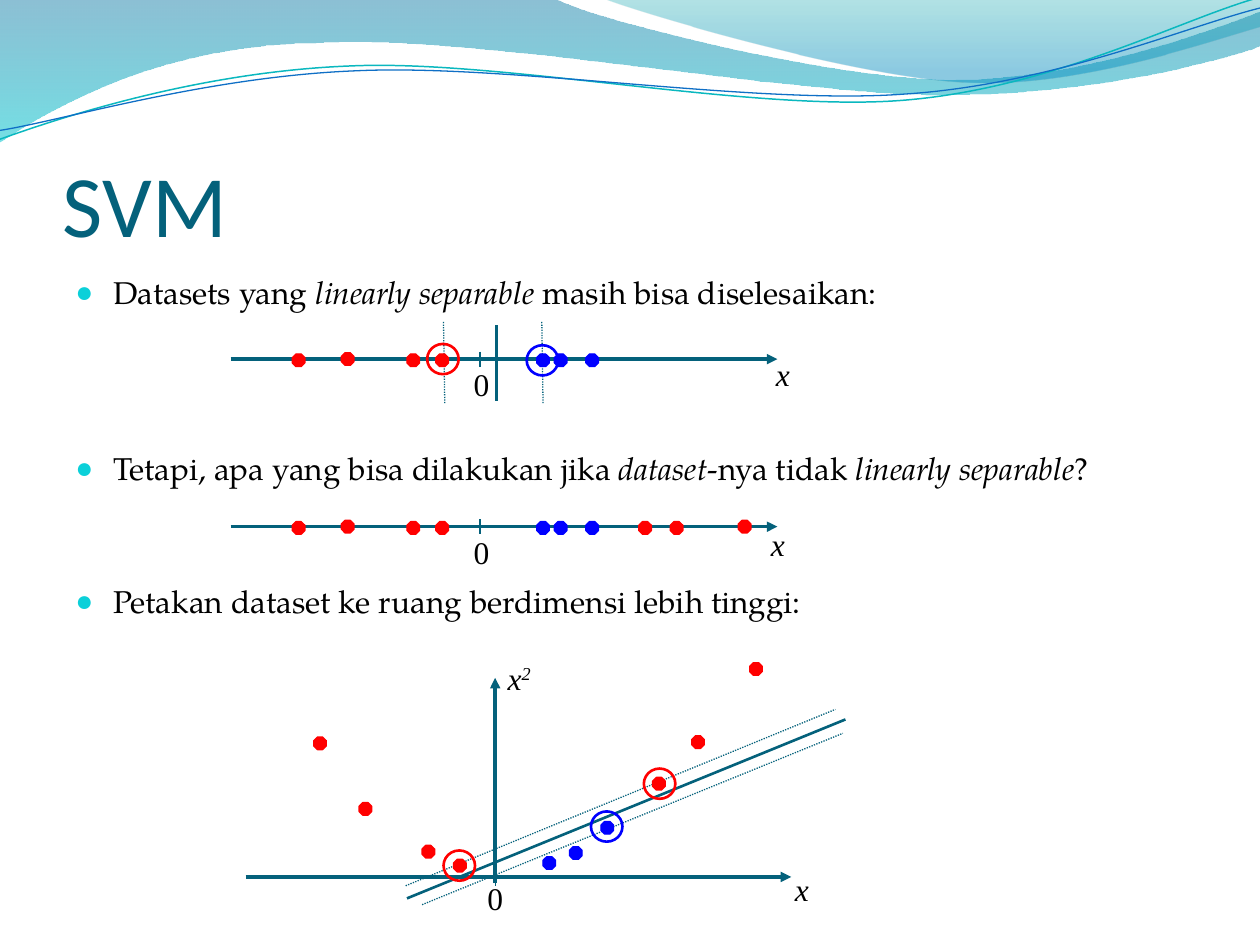
from lxml.etree import SubElement
from pptx import Presentation
from pptx.dml.color import RGBColor
from pptx.enum.dml import MSO_LINE_DASH_STYLE as Dash
from pptx.enum.shapes import MSO_CONNECTOR as Connector, MSO_SHAPE as Shape
from pptx.enum.text import MSO_ANCHOR as Anchor
from pptx.oxml.ns import qn
from pptx.util import Inches, Pt

TEAL, RED, BLUE = "04617B", "FF0000", "0000FF"
color = RGBColor.from_string


def add_wave(start, segments, close):
    """Draw straight (2 numbers) and cubic (6 numbers) segments as one outline."""
    points = [(Inches(x), Inches(y)) for segment in segments
              for x, y in zip(segment[::2], segment[1::2])]
    builder = shapes.build_freeform(Inches(start[0]), Inches(start[1]))
    builder.add_line_segments(points, close=close)
    wave = builder.convert_to_shape()
    wave.shadow.inherit = False
    # Merge each three points of a cubic segment into one curve
    corners = iter(list(wave._element.iter(qn("a:lnTo"))))
    for segment in segments:
        corner = next(corners)
        if len(segment) == 6:
            corner.tag = qn("a:cubicBezTo")
            for _ in range(2):
                extra = next(corners)
                corner.append(extra[0])
                extra.getparent().remove(extra)
    return wave


deck = Presentation()
deck.slide_width, deck.slide_height = Inches(10), Inches(7.5)
page = deck.slides.add_slide(deck.slide_layouts[6])
shapes = page.shapes

# Filled waves: start, segments, gradient stops (position, colour, opacity %)
filled_waves = [
    ((0, -0.01),
     [(4.4, -0.01), (4.76, 0.17, 6.64, 0.63, 7.58, 0.63), (8.53, 0.63, 9.58, 0.26, 10, 0.09),
      (10.01, 0.36), (9.83, 0.44, 8.7, 0.76, 7.46, 0.75), (6.22, 0.75, 3.82, 0.28, 2.57, 0.34),
      (1.29, 0.35, 0.46, 0.83, -0.01, 1.13), (0, -0.01)],
     [(0, "0074A1", 45), (1, "00C6CF", 55)]),
    ((4.79, -0.01),
     [(5.09, 0.11, 6.82, 0.62, 7.69, 0.65), (8.56, 0.69, 9.61, 0.32, 10, 0.21), (10, 0),
      (4.79, -0.01)],
     [(0, "00A1A9", 30), (0.8, "008BBF", 45)]),
]
for start, segments, stops in filled_waves:
    wave = add_wave(start, segments, True)
    wave.line.fill.background()
    wave.fill.gradient()
    wave.fill.gradient_angle = 270
    for stop, (position, shade, opacity) in zip(wave.fill.gradient_stops, stops):
        stop.position = position
        stop.color.rgb = color(shade)
    for node, (position, shade, opacity) in zip(wave._element.iter(qn("a:srgbClr")), stops):
        SubElement(node, qn("a:alpha"), val=str(opacity * 1000))

# Wave outlines, tilted slightly
wave_lines = [
    ((-0.02, 0.87), [(0.47, 0.72, 1.58, 0.41, 2.78, 0.42), (3.96, 0.42, 5.91, 0.93, 7.12, 0.9),
                     (8.32, 0.87, 9.39, 0.36, 10, 0.22)], "0AB8BF", 0.85),
    ((-0.02, 0.8), [(0.46, 0.75, 1.64, 0.45, 2.83, 0.46), (4.03, 0.46, 5.96, 0.88, 7.16, 0.85),
                    (8.35, 0.83, 9.42, 0.42, 10.02, 0.3)], "0F6FC6", 0.75),
]
for start, segments, shade, width in wave_lines:
    wave = add_wave(start, segments, False)
    wave.rotation = 357.3
    wave.fill.background()
    wave.line.color.rgb = color(shade)
    wave.line.width = Pt(width)

# Title
box = shapes.add_textbox(Inches(0.5), Inches(0.77), Inches(9), Inches(1.25))
frame = box.text_frame
frame.word_wrap = True
frame.vertical_anchor = Anchor.BOTTOM
frame.margin_left = frame.margin_right = frame.margin_bottom = 0
para = frame.paragraphs[0]
para.text = "SVM"
para.font.name, para.font.size = "Calibri", Pt(50)
para.font.color.rgb = color(TEAL)

# Bullets: space before, then runs that alternate upright and italic
bullets = [
    (0, ["Datasets yang ", "linearly separable", " masih bisa diselesaikan:"]),
    (79, ["Tetapi, apa yang bisa dilakukan jika ", "dataset", "-nya tidak ",
          "linearly separable", "?"]),
    (54.4, ["Petakan dataset ke ruang berdimensi lebih tinggi:"]),
]
box = shapes.add_textbox(Inches(0.5), Inches(2.12), Inches(9), Inches(4.8))
frame = box.text_frame
frame.word_wrap = True
for index, (gap, texts) in enumerate(bullets):
    para = frame.add_paragraph() if index else frame.paragraphs[0]
    props = para._p.get_or_add_pPr()
    props.set("marL", str(Inches(0.3)))
    props.set("indent", str(-Inches(0.3)))
    SubElement(SubElement(props, qn("a:buClr")), qn("a:srgbClr"), val="0BD0D9")
    SubElement(props, qn("a:buSzPct"), val="95000")
    SubElement(props, qn("a:buFont"), typeface="Times New Roman")
    SubElement(props, qn("a:buChar"), char="●")
    if gap:
        para.space_before = Pt(gap)
    para.font.name, para.font.size = "TeX Gyre Pagella", Pt(18)
    para.font.color.rgb = color("000000")
    for order, text in enumerate(texts):
        span = para.add_run()
        span.text = text
        if order % 2:
            span.font.italic = True

# Contents of the three plots
number_lines = (2.85, 4.18)
lines = []   # x1, y1, x2, y2, width, style
dots = []    # left, top, colour
labels = []  # left, top, width, text, superscript
for axis in number_lines:
    lines += [(1.83, axis, 6.17, axis, 2, "arrow"),
              (3.81, axis - 0.06, 3.81, axis + 0.06, 0.75, "solid")]
    dots += [(x, axis - 0.04, RED) for x in (2.32, 3.23, 3.46)]
    dots += [(2.71, axis - 0.05, RED)]
    dots += [(x, axis - 0.04, BLUE) for x in (4.26, 4.4, 4.65)]
    labels.append((3.66, axis, 0.38, "0", ""))

# Separable data: boundary and margins
lines += [(3.94, 2.58, 3.94, 3.18, 1.5, "solid"),
          (4.31, 3.2, 4.3, 2.55, 0.75, "dotted"),
          (3.53, 3.2, 3.52, 2.55, 0.75, "dotted")]

# Non-separable data: red points on the right
dots += [(5.07, 4.14, RED), (5.32, 4.14, RED), (5.86, 4.13, RED)]

# Data mapped to two dimensions
lines += [(1.95, 6.96, 6.28, 6.96, 2, "arrow"),
          (3.93, 6.9, 3.93, 7.03, 0.75, "solid"),
          (3.93, 7.01, 3.93, 5.38, 2, "arrow"),
          (3.23, 7.13, 6.71, 5.71, 1.5, "solid"),
          (3.22, 7.03, 6.63, 5.63, 0.75, "dotted"),
          (3.35, 7.18, 6.69, 5.82, 0.75, "dotted")]
dots += [(x, y, RED) for x, y in ((2.49, 5.85), (2.85, 6.37), (3.35, 6.71), (3.6, 6.82),
                                  (5.18, 6.17), (5.49, 5.84), (5.95, 5.26))]
dots += [(x, y, BLUE) for x, y in ((4.31, 6.8), (4.52, 6.72), (4.77, 6.52))]
labels += [(6.06, 2.77, 0.5, "x", ""), (6.02, 4.12, 0.5, "x", ""), (6.21, 6.86, 0.5, "x", ""),
           (3.93, 5.18, 0.5, "x", "2"), (3.77, 6.93, 0.38, "0", "")]

# Support vectors
rings = [(4.18, 2.74, BLUE), (3.39, 2.73, RED), (5.11, 6.1, RED), (4.69, 6.44, BLUE),
         (3.52, 6.75, RED)]

# Axes, ticks, boundaries and margins
for x1, y1, x2, y2, width, style in lines:
    line = shapes.add_connector(Connector.STRAIGHT, Inches(x1), Inches(y1), Inches(x2), Inches(y2))
    line.line.color.rgb = color(TEAL)
    line.line.width = Pt(width)
    if style == "dotted":
        line.line.dash_style = Dash.ROUND_DOT
    if style == "arrow":
        SubElement(line.line._get_or_add_ln(), qn("a:tailEnd"), type="triangle")
    SubElement(line._element.spPr, qn("a:effectLst"))

# Data points
for left, top, shade in dots:
    dot = shapes.add_shape(Shape.OCTAGON, Inches(left), Inches(top), Inches(0.1), Inches(0.1))
    dot.shadow.inherit = False
    dot.fill.solid()
    dot.fill.fore_color.rgb = dot.line.color.rgb = color(shade)
    dot.line.width = Pt(0.75)

# Rings around the support vectors
for left, top, shade in rings:
    ring = shapes.add_shape(Shape.OVAL, Inches(left), Inches(top), Inches(0.25), Inches(0.24))
    ring.shadow.inherit = False
    ring.fill.background()
    ring.line.color.rgb = color(shade)
    ring.line.width = Pt(1.5)

# Axis labels
for left, top, width, text, power in labels:
    box = shapes.add_textbox(Inches(left), Inches(top), Inches(width), Inches(0.4))
    box.text_frame.word_wrap = True
    para = box.text_frame.paragraphs[0]
    para.text = text
    para.font.name, para.font.size = "Times New Roman", Pt(18)
    para.font.italic = text == "x"
    para.font.color.rgb = color("000000")
    if power:
        span = para.add_run()
        span.text = power
        span.font._element.set("baseline", "30000")

deck.save("out.pptx")
